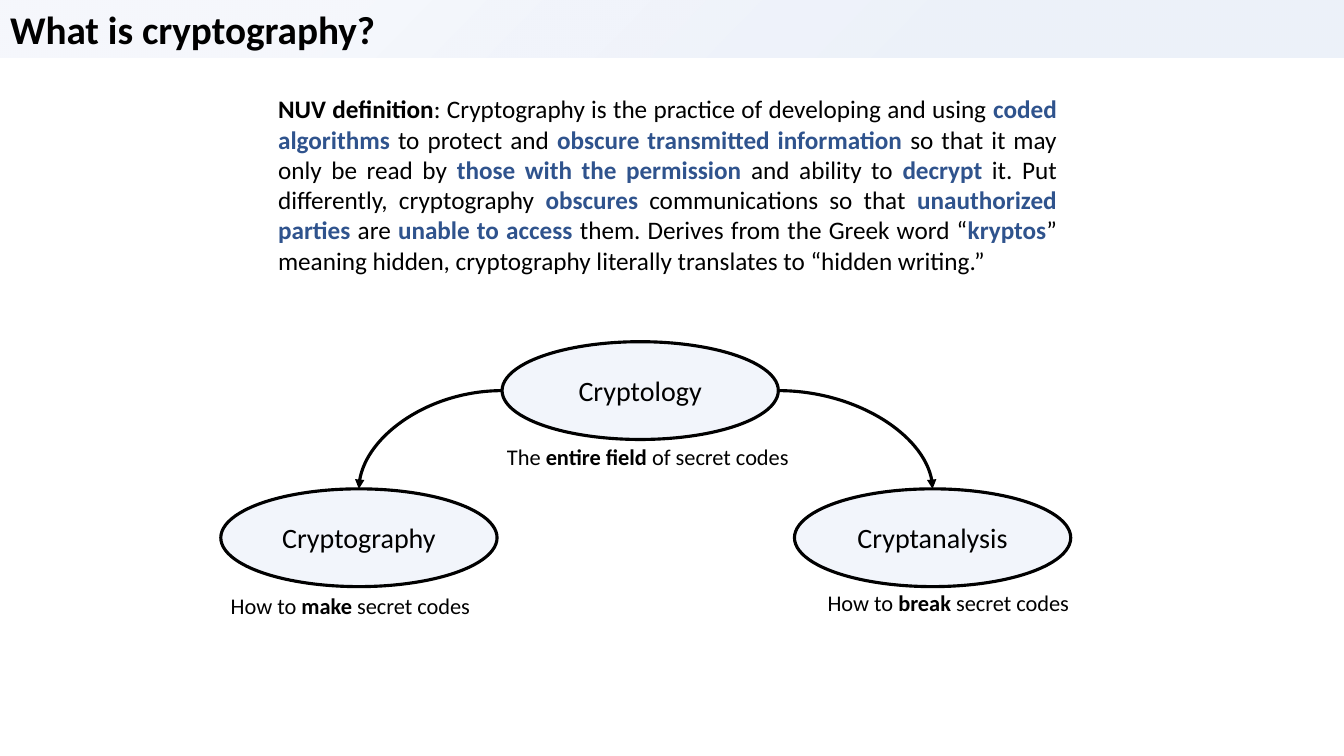
from dataclasses import dataclass

from lxml import etree
from pptx import Presentation
from pptx.dml.color import RGBColor
from pptx.enum import shapes, text
from pptx.oxml import parse_xml
from pptx.oxml.ns import nsdecls, qn
from pptx.util import Inches, Pt


@dataclass(frozen=True)
class Theme:
    font: str = "Calibri"
    black: RGBColor = RGBColor(0x00, 0x00, 0x00)
    accent: RGBColor = RGBColor(0x2F, 0x53, 0x8D)
    node: RGBColor = RGBColor(0xF2, 0xF5, 0xFB)
    banner: str = "4472C4"
    title: Pt = Pt(28)
    label: Pt = Pt(20)
    body: Pt = Pt(18)
    caption: Pt = Pt(16)
    line: Pt = Pt(2.25)


THEME = Theme()


def write(tf, marked, size, align, bold_color=THEME.black):
    """Fill the first paragraph; parts between asterisks are bold."""
    tf.word_wrap = True
    p = tf.paragraphs[0]
    p.alignment = align
    for i, part in enumerate(marked.split("*")):
        if part:
            r = p.add_run()
            r.text = part
            r.font.name, r.font.size = THEME.font, size
            r.font.bold = i % 2 == 1
            r.font.color.rgb = bold_color if r.font.bold else THEME.black


def add_text(s, left, top, width, height, marked, size, bold_color=THEME.black):
    box = s.shapes.add_textbox(Inches(left), Inches(top), Inches(width), Inches(height))
    write(box.text_frame, marked, size, text.PP_ALIGN.JUSTIFY, bold_color)


prs = Presentation()
prs.slide_width, prs.slide_height = Inches(13.33), Inches(7.5)
s = prs.slides.add_slide(prs.slide_layouts[5])

# Title banner
title = s.shapes.title
title.left, title.top = Inches(0), Inches(0)
title.width, title.height = prs.slide_width, Inches(0.57)
tf = title.text_frame
tf.auto_size = text.MSO_AUTO_SIZE.NONE
tf.vertical_anchor = text.MSO_ANCHOR.TOP
write(tf, "*What is cryptography?*", THEME.title, text.PP_ALIGN.LEFT)
stops = "".join(
    f'<a:gs pos="{pos}000"><a:srgbClr val="{THEME.banner}">'
    f'<a:alpha val="{alpha}000"/></a:srgbClr></a:gs>'
    for pos, alpha in ((26, 10), (76, 5)))
title.element.spPr.append(parse_xml(
    f'<a:gradFill {nsdecls("a")}><a:gsLst>{stops}</a:gsLst>'
    '<a:path path="circle"><a:fillToRect l="100000" t="100000"/></a:path></a:gradFill>'))

# Definition
add_text(
    s, 2.66, 0.88, 7.92, 1.92,
    ": Cryptography is the practice of developing and using *coded algorithms *"
    "to protect and *obscure transmitted information *so that it may only be read by "
    "*those with the permission* and ability to *decrypt* it. Put differently, "
    "cryptography *obscures* communications so that *unauthorized parties *are "
    "*unable to access *them. Derives from the Greek word “*kryptos*” meaning hidden, "
    "cryptography literally translates to “hidden writing.”",
    THEME.body, THEME.accent)
p = s.shapes[-1].text_frame.paragraphs[0]
lead = p.add_run()
lead.text = "NUV definition"
lead.font.name, lead.font.size, lead.font.bold = THEME.font, THEME.body, True
lead.font.color.rgb = THEME.black
p.runs[0]._r.addprevious(lead._r)

# Tree of fields
NODE_W, NODE_H = 2.74, 0.97
ROOT_X, ROOT_Y, CHILD_Y = 4.98, 3.39, 4.85
MAKE_X, BREAK_X = 2.19, 7.88
for name, x, y in (("Cryptology", ROOT_X, ROOT_Y),
                   ("Cryptography", MAKE_X, CHILD_Y),
                   ("Cryptanalysis", BREAK_X, CHILD_Y)):
    node = s.shapes.add_shape(shapes.MSO_SHAPE.OVAL, Inches(x), Inches(y),
                              Inches(NODE_W), Inches(NODE_H))
    node.shadow.inherit = False
    node.fill.solid()
    node.fill.fore_color.rgb = THEME.node
    node.line.color.rgb, node.line.width = THEME.black, THEME.line
    node.text_frame.vertical_anchor = text.MSO_ANCHOR.MIDDLE
    write(node.text_frame, name, THEME.label, text.PP_ALIGN.CENTER)

for start_x, child_x in ((ROOT_X, MAKE_X), (ROOT_X + NODE_W, BREAK_X)):
    arrow = s.shapes.add_connector(
        shapes.MSO_CONNECTOR.CURVE, Inches(start_x), Inches(ROOT_Y + NODE_H / 2),
        Inches(child_x + NODE_W / 2), Inches(CHILD_Y))
    arrow.line.color.rgb, arrow.line.width = THEME.black, THEME.line
    spPr = arrow._element.spPr
    spPr.find(qn("a:prstGeom")).set("prst", "curvedConnector2")
    etree.SubElement(spPr.find(qn("a:ln")), qn("a:tailEnd"), type="triangle")
    etree.SubElement(spPr, qn("a:effectLst"))

for x, y, caption in ((4.93, 4.35, "The *entire field* of secret codes"),
                      (2.19, 5.83, "How to *make* secret codes"),
                      (8.11, 5.8, "How to *break* secret codes")):
    add_text(s, x, y, 3.5, 0.37, caption, THEME.caption)

prs.save("out.pptx")
